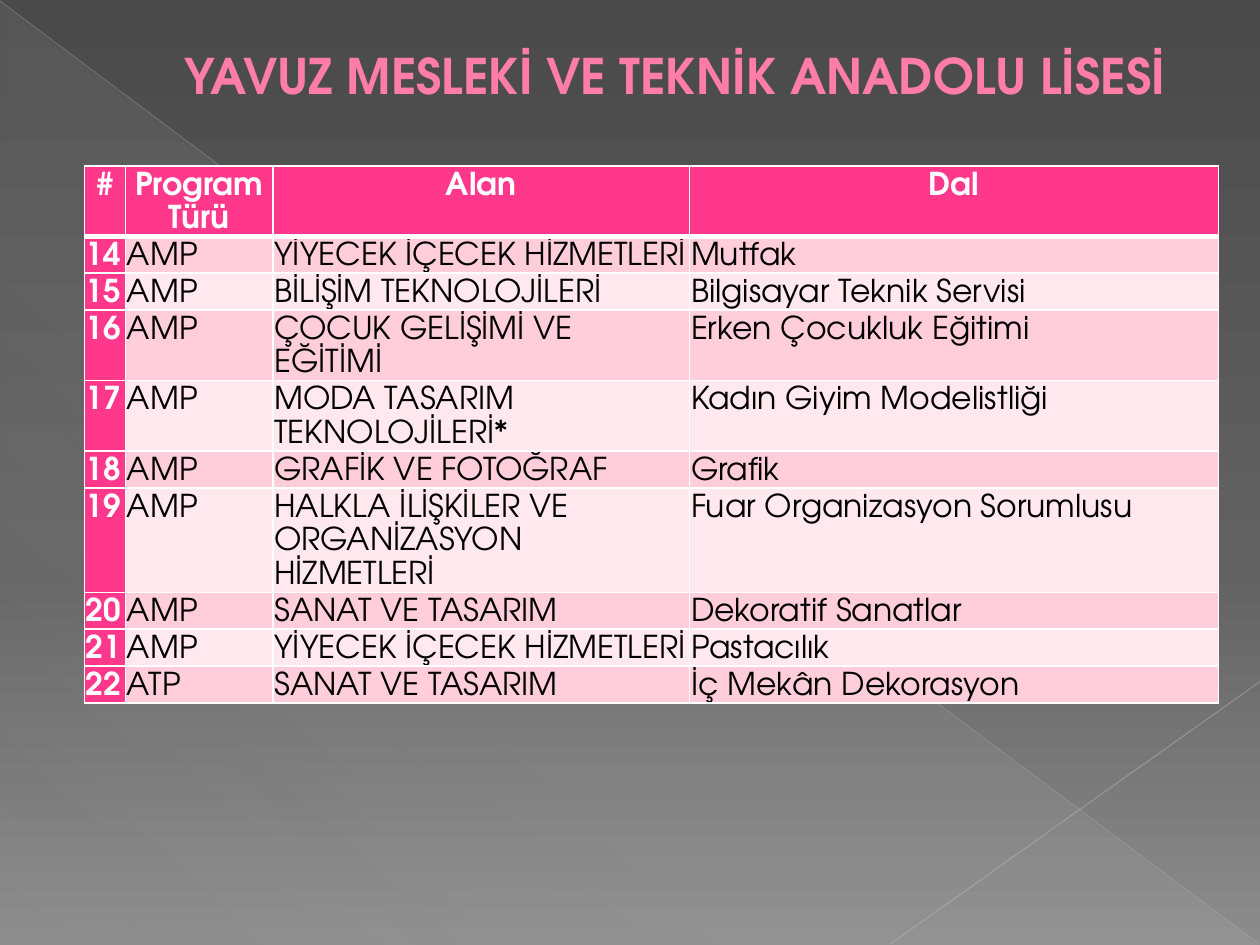
"""Builds the programme table slide of a vocational high school."""
from dataclasses import dataclass
from lxml import etree
from pptx import Presentation
from pptx.dml.color import RGBColor as RGB
from pptx.enum.shapes import MSO_CONNECTOR as CONN, MSO_SHAPE as SHAPE
from pptx.enum.text import MSO_ANCHOR as ANCHOR, PP_ALIGN as ALIGN
from pptx.oxml import parse_xml
from pptx.oxml.ns import nsdecls, qn
from pptx.util import Cm, Pt


@dataclass(frozen=True)
class Theme:
    font: str = "TeX Gyre Adventor"
    title_size: int = 28
    cell_size: int = 18
    title: str = "FF7DA7"
    outline: str = "B12761"
    accent: str = "FF388C"
    bands: tuple = ("FFCEDA", "FFE8EE")
    white: str = "FFFFFF"
    black: str = "000000"
    backdrop: tuple = ((0, "4A4A4A", 100), (60, "626262", 100), (100, "8C8C8C", 100))
    veil: tuple = ((0, "D2D2D2", 10), (70, "D2D2D2", 8), (100, "D2D2D2", 1))


def gradient(stops, angle):
    gs = "".join(
        f'<a:gs pos="{pos * 1000}"><a:srgbClr val="{color}">'
        f'<a:alpha val="{alpha * 1000}"/></a:srgbClr></a:gs>'
        for pos, color, alpha in stops)
    return parse_xml(f'<a:gradFill {nsdecls("a")} rotWithShape="1"><a:gsLst>{gs}</a:gsLst>'
                     f'<a:lin ang="{angle * 60000}" scaled="0"/></a:gradFill>')


def style_run(r, size, color, bold):
    r.font.name = theme.font
    r.font.size = Pt(size)
    r.font.bold = bold
    r.font.color.rgb = RGB.from_string(color)


theme = Theme()
prs = Presentation()
prs.slide_width, prs.slide_height = Cm(25.4), Cm(19.05)
s = prs.slides.add_slide(prs.slide_layouts[5])

s.background.fill.solid()
solid = next(s.background._cSld.iter(qn("a:solidFill")))
solid.getparent().replace(solid, gradient(theme.backdrop, 90))

veil = s.shapes.add_shape(SHAPE.RIGHT_TRIANGLE, Cm(0.02), Cm(0.04), Cm(25.36), Cm(19))
veil.shadow.inherit = False
veil.line.fill.background()
veil.fill.solid()
solid = veil._element.spPr.find(qn("a:solidFill"))
veil._element.spPr.replace(solid, gradient(theme.veil, 133))

for x1, y1, x2, y2, color, width, alpha in (
        (0, 0.02, 25.38, 19.03, "BFBFBF", 0.39, 35),
        (25.4, 13.74, 17.95, 19.03, "C6C6C6", 0.47, 45)):
    line = s.shapes.add_connector(CONN.STRAIGHT, Cm(x1), Cm(y1), Cm(x2), Cm(y2))
    line.line.width = Pt(width)
    line.line.color.rgb = RGB.from_string(color)
    clr = next(line._element.spPr.iter(qn("a:srgbClr")))
    etree.SubElement(clr, qn("a:alpha"), val=str(alpha * 1000))
    etree.SubElement(line._element.spPr, qn("a:effectLst"))

title = s.shapes.title
title._element.getparent().append(title._element)
title.left, title.top, title.width, title.height = Cm(1.5), Cm(0.91), Cm(22.86), Cm(1.2)
tf = title.text_frame
tf.text = "YAVUZ MESLEKİ VE TEKNİK ANADOLU LİSESİ"
tf.word_wrap = True
tf.vertical_anchor = ANCHOR.MIDDLE
p = tf.paragraphs[0]
p.alignment = ALIGN.CENTER
p._p.get_or_add_pPr().set("marL", str(Cm(1.35)))
p._p.get_or_add_pPr().set("indent", "0")
r = p.runs[0]
style_run(r, theme.title_size, theme.title, True)
r._r.get_or_add_rPr().insert(0, parse_xml(
    f'<a:ln {nsdecls("a")} w="{Pt(0.5)}"><a:solidFill>'
    f'<a:srgbClr val="{theme.outline}"/></a:solidFill></a:ln>'))

rows = (
    ("#", "Program Türü", "Alan", "Dal"),
    ("14", "AMP", "YİYECEK İÇECEK HİZMETLERİ", "Mutfak"),
    ("15", "AMP", "BİLİŞİM TEKNOLOJİLERİ", "Bilgisayar Teknik Servisi"),
    ("16", "AMP", "ÇOCUK GELİŞİMİ VE EĞİTİMİ", "Erken Çocukluk Eğitimi"),
    ("17", "AMP", "MODA TASARIM TEKNOLOJİLERİ*", "Kadın Giyim Modelistliği"),
    ("18", "AMP", "GRAFİK VE FOTOĞRAF", "Grafik"),
    ("19", "AMP", "HALKLA İLİŞKİLER VE ORGANİZASYON HİZMETLERİ", "Fuar Organizasyon Sorumlusu"),
    ("20", "AMP", "SANAT VE TASARIM", "Dekoratif Sanatlar"),
    ("21", "AMP", "YİYECEK İÇECEK HİZMETLERİ", "Pastacılık"),
    ("22", "ATP", "SANAT VE TASARIM", "İç Mekân Dekorasyon"),
)
col_widths = (0.83, 2.97, 8.4, 10.66)
row_lines = (2, 1, 1, 2, 2, 1, 3, 1, 1, 1)
row_heights = [0.06 + 0.67 * n for n in row_lines]

table = s.shapes.add_table(len(rows), len(col_widths), Cm(1.7), Cm(3.35),
                           Cm(sum(col_widths)), Cm(sum(row_heights))).table
table.horz_banding = False
for column, width in zip(table.columns, col_widths):
    column.width = Cm(width)

for i, texts in enumerate(rows):
    table.rows[i].height = Cm(row_heights[i])
    for j, text in enumerate(texts):
        cell = table.cell(i, j)
        strong = i == 0 or j == 0
        cell.margin_left = cell.margin_right = cell.margin_top = cell.margin_bottom = Cm(0.03)
        cell.text_frame.text = text
        p = cell.text_frame.paragraphs[0]
        p.alignment = ALIGN.CENTER if i == 0 else ALIGN.LEFT
        p.line_spacing = 1.15
        style_run(p.runs[0], theme.cell_size, theme.white if strong else theme.black, strong)
        cell.fill.solid()
        cell.fill.fore_color.rgb = RGB.from_string(
            theme.accent if strong else theme.bands[(i - 1) % 2])
        tcPr = cell._tc.get_or_add_tcPr()
        for k, side in enumerate("LRTB"):
            thick = (i == 0 and side == "B") or (i == 1 and side == "T")
            tcPr.insert(k, parse_xml(
                f'<a:ln{side} {nsdecls("a")} w="{Pt(3 if thick else 1)}"><a:solidFill>'
                f'<a:srgbClr val="{theme.white}"/></a:solidFill></a:ln{side}>'))

prs.save("out.pptx")
